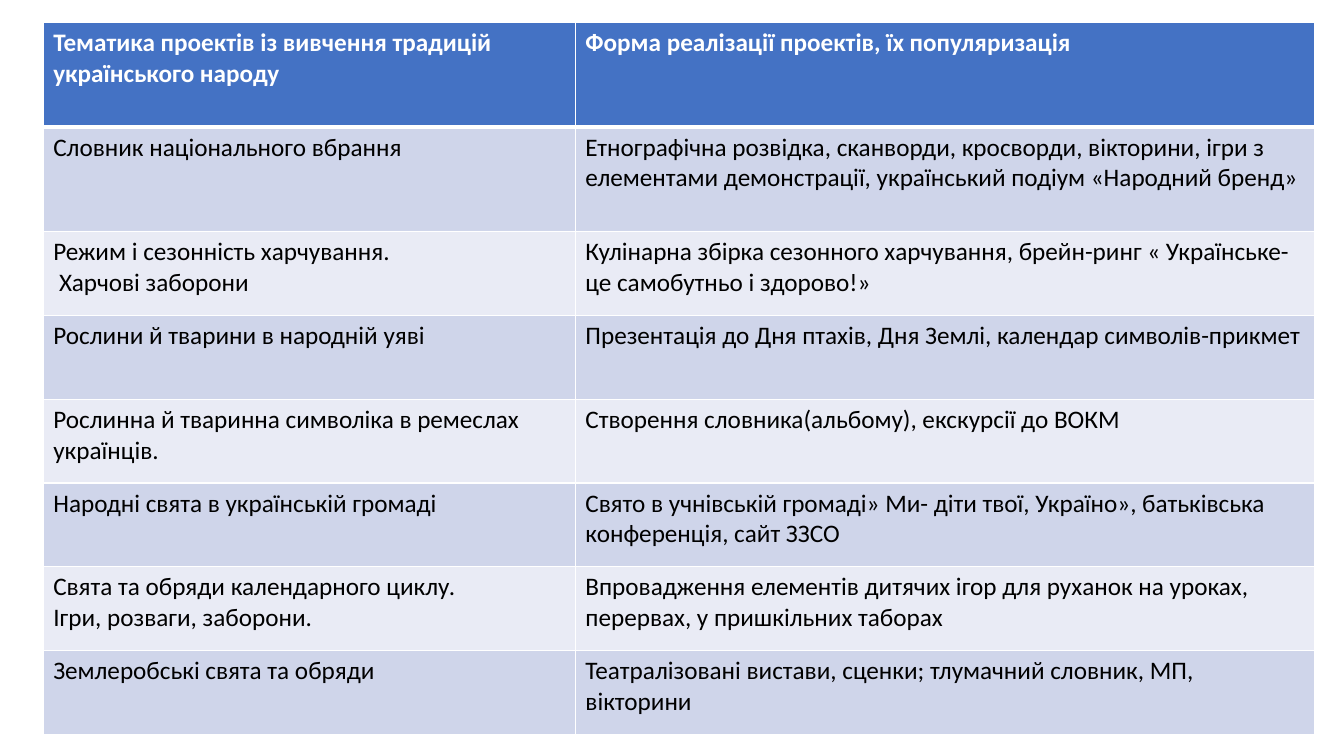
from dataclasses import dataclass

from lxml.etree import SubElement
from pptx import Presentation
from pptx.dml.color import RGBColor
from pptx.oxml.ns import qn
from pptx.table import _Cell as Cell
from pptx.util import Cm, Pt

WHITE, BLACK = "FFFFFF", "000000"
HEADER_FILL = "4472C4"
BAND_FILLS = ("CFD5EA", "E9EBF5")
THIN, THICK = 1, 3

COLUMN_WIDTHS = (13.41, 18.62)
TALL_ROW, ROW = 2.64, 2.11
TABLE_LEFT, TABLE_TOP = 1.09, 0.56


@dataclass(frozen=True)
class Project:
    topic: str
    form: str


@dataclass(frozen=True)
class RowStyle:
    fill: str
    color: str = BLACK
    bold: bool = False
    top: int = THIN
    bottom: int = THIN


# Header row first, then one row per project; a line break starts a paragraph
PROJECTS = (
    Project("Тематика проектів із вивчення традицій українського народу",
            "Форма реалізації проектів, їх популяризація"),
    Project("Словник національного вбрання",
            "Етнографічна розвідка, сканворди, кросворди, вікторини, ігри з "
            "елементами демонстрації, український подіум «Народний бренд»"),
    Project("Режим і сезонність харчування.\n Харчові заборони",
            "Кулінарна збірка сезонного харчування, брейн-ринг « Українське-"
            "це самобутньо і здорово!»"),
    Project("Рослини й тварини в народній уяві",
            "Презентація до Дня птахів, Дня Землі, календар символів-прикмет"),
    Project("Рослинна й тваринна символіка в ремеслах українців.",
            "Створення словника(альбому), екскурсії до ВОКМ"),
    Project("Народні свята в українській громаді",
            "Свято в учнівській громаді» Ми- діти твої, Україно», батьківська "
            "конференція, сайт ЗЗСО"),
    Project("Свята та обряди календарного циклу.\nІгри, розваги, заборони.",
            "Впровадження елементів дитячих ігор для руханок на уроках, "
            "перервах, у пришкільних таборах"),
    Project("Землеробські свята та обряди",
            "Театралізовані вистави, сценки; тлумачний словник, МП, вікторини"),
)


def rgb(value: str) -> RGBColor:
    return RGBColor.from_string(value)


def row_style(index: int) -> RowStyle:
    if index == 0:
        return RowStyle(HEADER_FILL, WHITE, bold=True, bottom=THICK)
    fill = BAND_FILLS[(index - 1) % len(BAND_FILLS)]
    return RowStyle(fill, top=THICK if index == 1 else THIN)


def set_borders(cell: Cell, style: RowStyle) -> None:
    properties = cell._tc.get_or_add_tcPr()
    widths = {"a:lnL": THIN, "a:lnR": THIN, "a:lnT": style.top, "a:lnB": style.bottom}
    for tag, width in widths.items():
        line = SubElement(properties, qn(tag), w=str(Pt(width)))
        fill = SubElement(line, qn("a:solidFill"))
        SubElement(fill, qn("a:srgbClr"), val=WHITE)


def fill_cell(cell: Cell, text: str, style: RowStyle) -> None:
    set_borders(cell, style)
    cell.fill.solid()
    cell.fill.fore_color.rgb = rgb(style.fill)
    cell.text = text
    font_format = {"name": "Calibri", "size": Pt(18), "bold": style.bold}
    for paragraph in cell.text_frame.paragraphs:
        for run in paragraph.runs:
            for attribute, value in font_format.items():
                setattr(run.font, attribute, value)
            run.font.color.rgb = rgb(style.color)


def main() -> None:
    presentation = Presentation()
    presentation.slide_width, presentation.slide_height = Cm(33.87), Cm(19.05)
    slide = presentation.slides.add_slide(presentation.slide_layouts[6])

    # Table grid: the header and the first project have taller rows
    heights = [TALL_ROW if index < 2 else ROW for index in range(len(PROJECTS))]
    table = slide.shapes.add_table(
        len(PROJECTS), len(COLUMN_WIDTHS), Cm(TABLE_LEFT), Cm(TABLE_TOP),
        Cm(sum(COLUMN_WIDTHS)), Cm(sum(heights))).table
    for column, width in zip(table.columns, COLUMN_WIDTHS):
        column.width = Cm(width)

    # Table content
    for index, (project, height) in enumerate(zip(PROJECTS, heights)):
        table.rows[index].height = Cm(height)
        for position, text in enumerate((project.topic, project.form)):
            fill_cell(table.cell(index, position), text, row_style(index))

    presentation.save("out.pptx")


if __name__ == "__main__":
    main()
